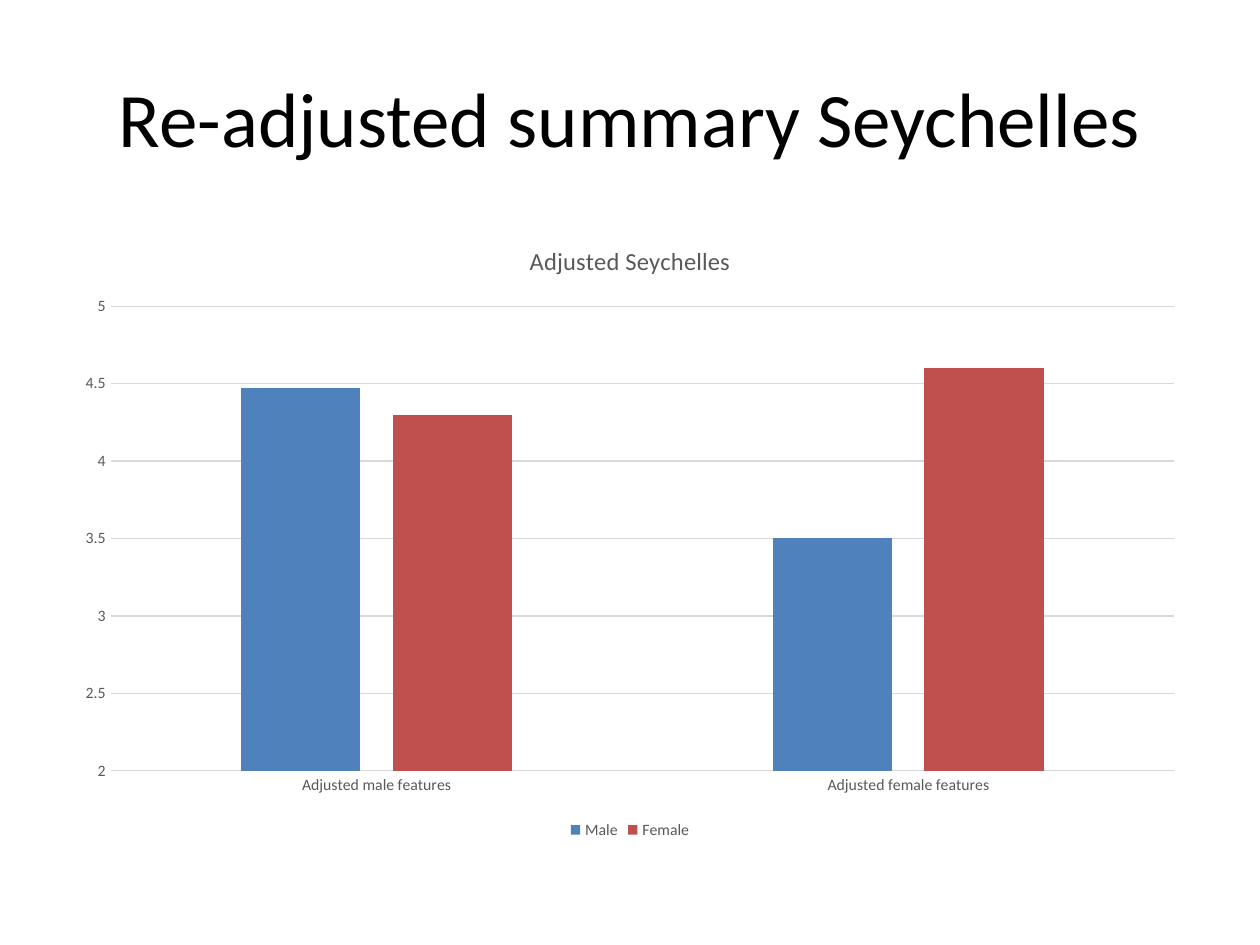
import pptx
import pptx.chart.data
import pptx.dml.color
import pptx.enum.chart
import pptx.enum.text
import pptx.util
from pptx.util import Inches

RGB = pptx.dml.color.RGBColor
BLACK = RGB(0, 0, 0)
GRAY = RGB(0x59, 0x59, 0x59)
PALE = RGB(0xD9, 0xD9, 0xD9)
BLUE = RGB(0x4F, 0x81, 0xBD)
RED = RGB(0xC0, 0x50, 0x4D)

CATS = ["Adjusted male features", "Adjusted female features"]
SERIES = [("Male", (4.47, 3.5), BLUE), ("Female", (4.3, 4.6), RED)]


def style(font, size, color):
    font.name = "Calibri"
    font.size = pptx.util.Pt(size)
    font.bold = False
    font.color.rgb = color


def rule(line):
    line.color.rgb = PALE
    line.width = pptx.util.Pt(0.75)


def add_title(slide, text):
    box = slide.shapes.add_textbox(Inches(0.5), Inches(0.3), Inches(9), Inches(1.25))
    frame = box.text_frame
    frame.word_wrap = True
    frame.vertical_anchor = pptx.enum.text.MSO_ANCHOR.MIDDLE
    par = frame.paragraphs[0]
    par.text = text
    par.alignment = pptx.enum.text.PP_ALIGN.CENTER
    style(par.font, 44, BLACK)


def add_bars(slide):
    data = pptx.chart.data.CategoryChartData()
    data.categories = CATS
    for name, vals, _ in SERIES:
        data.add_series(name, vals)
    kind = pptx.enum.chart.XL_CHART_TYPE.COLUMN_CLUSTERED
    chart = slide.shapes.add_chart(
        kind, Inches(0.5), Inches(1.75), Inches(9), Inches(4.95), data).chart
    style(chart.font, 10, BLACK)
    plot = chart.plots[0]
    plot.gap_width = 219
    plot.overlap = -27
    plot.vary_by_categories = False
    for bars, (_, _, color) in zip(plot.series, SERIES):
        bars.format.fill.solid()
        bars.format.fill.fore_color.rgb = color
        bars.invert_if_negative = False
    return chart


def set_head(chart, text):
    chart.has_title = True
    par = chart.chart_title.text_frame.paragraphs[0]
    par.text = text
    style(par.font, 14, GRAY)
    chart.chart_title.include_in_layout = False


def set_axes(chart):
    for axis in (chart.category_axis, chart.value_axis):
        axis.major_tick_mark = pptx.enum.chart.XL_TICK_MARK.NONE
        axis.minor_tick_mark = pptx.enum.chart.XL_TICK_MARK.NONE
        style(axis.tick_labels.font, 9, GRAY)
    rule(chart.category_axis.format.line)
    scale = chart.value_axis
    scale.minimum_scale = 2
    scale.maximum_scale = 5
    scale.major_unit = 0.5
    scale.tick_labels.number_format = "General"
    scale.tick_labels.number_format_is_linked = False
    scale.format.line.fill.background()
    scale.has_major_gridlines = True
    rule(scale.major_gridlines.format.line)


def set_legend(chart):
    chart.has_legend = True
    chart.legend.position = pptx.enum.chart.XL_LEGEND_POSITION.BOTTOM
    chart.legend.include_in_layout = False
    style(chart.legend.font, 9, GRAY)


def main():
    deck = pptx.Presentation()
    deck.slide_width = Inches(10)
    deck.slide_height = Inches(7.5)
    slide = deck.slides.add_slide(deck.slide_layouts[6])
    add_title(slide, "Re-adjusted summary Seychelles")
    chart = add_bars(slide)
    set_head(chart, "Adjusted Seychelles")
    set_axes(chart)
    set_legend(chart)
    deck.save("out.pptx")


if __name__ == "__main__":
    main()
